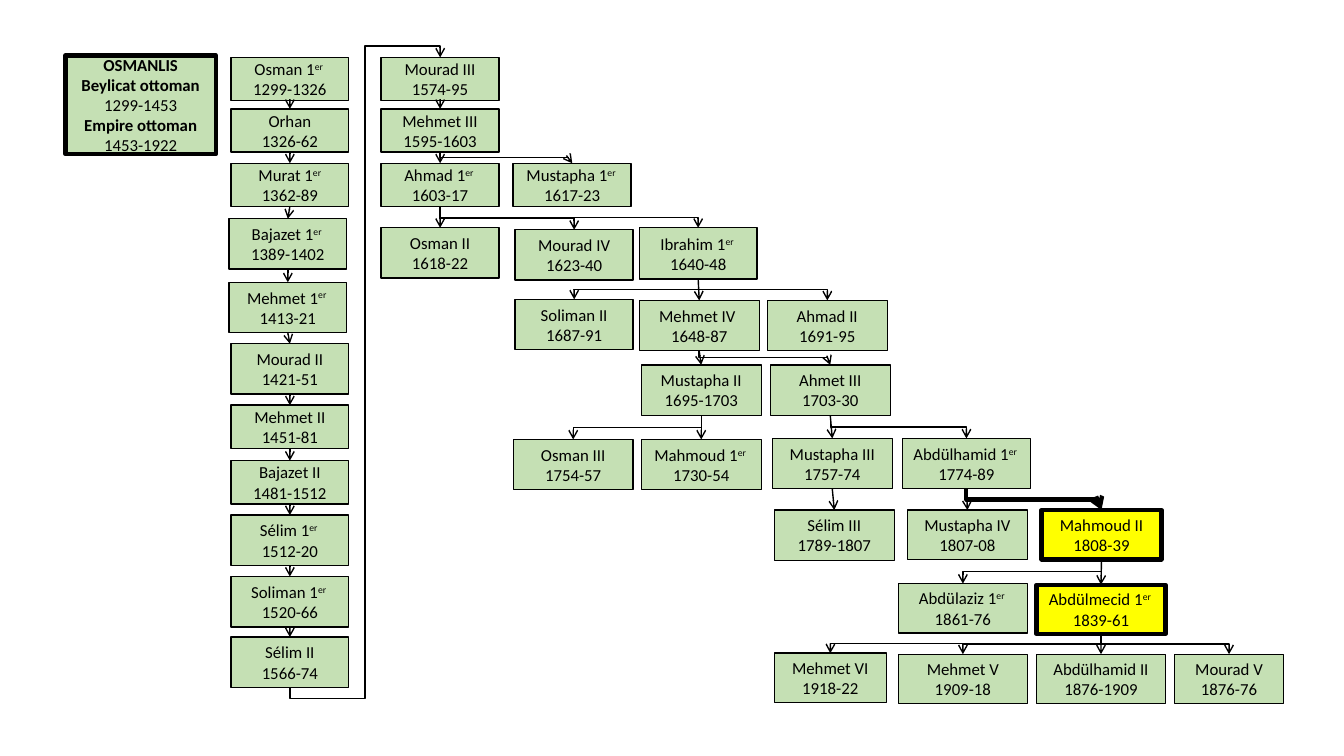
from dataclasses import dataclass

from lxml import etree
from pptx import Presentation
from pptx.dml.color import RGBColor
from pptx.enum.shapes import MSO_CONNECTOR, MSO_SHAPE
from pptx.enum.text import MSO_ANCHOR, PP_ALIGN
from pptx.oxml.ns import qn
from pptx.util import Inches, Pt

RECT = MSO_SHAPE.RECTANGLE
STRAIGHT = MSO_CONNECTOR.STRAIGHT
ELBOW = MSO_CONNECTOR.ELBOW
MIDDLE = MSO_ANCHOR.MIDDLE
CENTER = PP_ALIGN.CENTER
TOP, BOTTOM = 0, 2
RIGHT_ANGLE = 5400000


@dataclass(frozen=True)
class Theme:
    font: str = "Calibri"
    size: int = 12
    ink: RGBColor = RGBColor(0, 0, 0)
    green: RGBColor = RGBColor(0xC5, 0xE0, 0xB4)
    yellow: RGBColor = RGBColor(0xFF, 0xFF, 0)
    thin: int = 1
    thick: int = 3


class Tree:
    def __init__(self, slide, theme):
        self.s, self.theme = slide, theme

    def run(self, p, text, bold=False, raised=False):
        r = p.add_run()
        r.text = text
        r.font.name, r.font.size = self.theme.font, Pt(self.theme.size)
        r.font.bold = bold
        r.font.color.rgb = self.theme.ink
        if raised:
            r._r.get_or_add_rPr().set("baseline", "30000")

    def box(self, left, top, width, height, lines, bold=(), strong=False, fill=None):
        sp = self.s.shapes.add_shape(RECT, *map(Inches, (left, top, width, height)))
        sp.shadow.inherit = False
        sp.fill.solid()
        sp.fill.fore_color.rgb = fill or self.theme.green
        sp.line.color.rgb = self.theme.ink
        sp.line.width = Pt(self.theme.thick if strong else self.theme.thin)
        tf = sp.text_frame
        tf.word_wrap = True
        tf.vertical_anchor = MIDDLE
        for i, line in enumerate(lines):
            p = tf.paragraphs[0] if i == 0 else tf.add_paragraph()
            p.alignment = CENTER
            base, _, ordinal = line.partition("^")
            self.run(p, base, line in bold)
            if ordinal:
                self.run(p, ordinal, raised=True)
        return sp

    def link(self, parent, child, strong=False):
        x1, y1 = parent.left + parent.width // 2, parent.top + parent.height
        x2, y2 = child.left + child.width // 2, child.top
        straight = abs(x2 - x1) < Inches(0.05)
        c = self.s.shapes.add_connector(STRAIGHT if straight else ELBOW, x1, y1, x2, y2)
        c.begin_connect(parent, BOTTOM)
        c.end_connect(child, TOP)
        c.line.color.rgb = self.theme.ink
        c.line.width = Pt(self.theme.thick if strong else self.theme.thin)
        spPr = c._element.spPr
        etree.SubElement(spPr.find(qn("a:ln")), qn("a:tailEnd"), type="arrow")
        etree.SubElement(spPr, qn("a:effectLst"))
        if not straight:
            self.bend(c, x1, y1, x2, y2)

    def bend(self, c, x1, y1, x2, y2):
        width, height = abs(y2 - y1), abs(x2 - x1)
        c.left, c.top = (x1 + x2 - width) // 2, (y1 + y2 - height) // 2
        c.width, c.height = width, height
        upward, rightward = y2 < y1, x2 > x1
        xfrm = c._element.spPr.find(qn("a:xfrm"))
        turns = 3 if rightward and not upward else 1
        xfrm.set("rot", str(turns * RIGHT_ANGLE))
        xfrm.set("flipH", str(int(rightward)))
        xfrm.set("flipV", str(int(upward)))
        if upward:
            geom = c._element.spPr.find(qn("a:prstGeom"))
            geom.set("prst", "bentConnector5")
            guides = geom.find(qn("a:avLst"))
            for i, value in enumerate((-1800, 50000, 101800), 1):
                etree.SubElement(guides, qn("a:gd"), name=f"adj{i}", fmla=f"val {value}")


SULTANS = [
    (2.29, 0.57, 1.17, 0.43, "Osman 1^er ", "1299-1326"),
    (2.29, 1.08, 1.17, 0.43, "Orhan", "1326-62"),
    (2.29, 1.62, 1.17, 0.43, "Murat 1^er", "1362-89"),
    (2.27, 2.17, 1.17, 0.5, "Bajazet 1^er ", "1389-1402"),
    (2.27, 2.8, 1.17, 0.5, "Mehmet 1^er ", "1413-21"),
    (2.29, 3.41, 1.17, 0.5, "Mourad II", "1421-51"),
    (2.29, 4.02, 1.17, 0.43, "Mehmet II", "1451-81"),
    (2.29, 4.57, 1.17, 0.43, "Bajazet II", "1481-1512"),
    (2.29, 5.11, 1.17, 0.5, "Sélim 1^er ", "1512-20"),
    (2.29, 5.72, 1.17, 0.5, "Soliman 1^er ", "1520-66"),
    (2.29, 6.32, 1.17, 0.5, "Sélim II", "1566-74"),
    (3.78, 0.57, 1.17, 0.43, "Mourad III", "1574-95"),
    (3.78, 1.08, 1.17, 0.43, "Mehmet III", "1595-1603"),
    (3.78, 1.62, 1.17, 0.43, "Ahmad 1^er ", "1603-17"),
    (5.09, 1.62, 1.17, 0.43, "Mustapha 1^er ", "1617-23"),
    (3.78, 2.26, 1.17, 0.5, "Osman II", "1618-22"),
    (5.11, 2.28, 1.17, 0.5, "Mourad IV", "1623-40"),
    (6.34, 2.26, 1.17, 0.51, "Ibrahim 1^er ", "1640-48"),
    (5.11, 2.97, 1.17, 0.5, "Soliman II", "1687-91"),
    (6.34, 2.98, 1.19, 0.5, "Mehmet IV ", "1648-87"),
    (7.61, 2.98, 1.19, 0.5, "Ahmad II", "1691-95"),
    (6.36, 3.62, 1.19, 0.5, "Mustapha II", "1695-1703"),
    (7.64, 3.62, 1.19, 0.5, "Ahmet III", "1703-30"),
    (5.09, 4.36, 1.19, 0.5, "Osman III", "1754-57"),
    (6.36, 4.36, 1.19, 0.5, "Mahmoud 1^er ", "1730-54"),
    (7.66, 4.35, 1.19, 0.5, "Mustapha III", "1757-74"),
    (8.95, 4.35, 1.27, 0.5, "Abdülhamid 1^er ", "1774-89"),
    (7.68, 5.06, 1.19, 0.5, "Sélim III", "1789-1807"),
    (9, 5.06, 1.19, 0.49, "Mustapha IV", "1807-08"),
    (10.33, 5.06, 1.19, 0.49, "Mahmoud II", "1808-39"),
    (8.91, 5.79, 1.28, 0.49, "Abdülaziz 1^er ", "1861-76"),
    (10.28, 5.8, 1.28, 0.49, "Abdülmecid 1^er ", "1839-61"),
    (7.68, 6.48, 1.11, 0.49, "Mehmet VI", "1918-22"),
    (8.91, 6.49, 1.28, 0.49, "Mehmet V", "1909-18"),
    (10.28, 6.49, 1.28, 0.49, "Abdülhamid II", "1876-1909"),
    (11.65, 6.49, 1.08, 0.49, "Mourad V", "1876-76"),
]
DIRECT_LINE = 14
BRANCHES = {
    "Mehmet III": ["Mustapha 1"],
    "Ahmad 1": ["Osman II", "Mourad IV", "Ibrahim 1"],
    "Ibrahim 1": ["Soliman II", "Mehmet IV", "Ahmad II"],
    "Mehmet IV": ["Mustapha II", "Ahmet III"],
    "Mustapha II": ["Osman III", "Mahmoud 1"],
    "Ahmet III": ["Mustapha III", "Abdülhamid 1"],
    "Mustapha III": ["Sélim III"],
    "Abdülhamid 1": ["Mustapha IV", "Mahmoud II"],
    "Mahmoud II": ["Abdülaziz 1", "Abdülmecid 1"],
    "Abdülmecid 1": ["Mehmet VI", "Mehmet V", "Abdülhamid II", "Mourad V"],
}
HIGHLIGHTED = {"Mahmoud II", "Abdülmecid 1"}
STRONG_LINK = ("Abdülhamid 1", "Mahmoud II")
HEADINGS = ("OSMANLIS", "Beylicat ottoman", "Empire ottoman")


def main():
    prs = Presentation()
    prs.slide_width, prs.slide_height = Inches(13.33), Inches(7.5)
    theme = Theme()
    tree = Tree(prs.slides.add_slide(prs.slide_layouts[6]), theme)

    title, beylik, empire = HEADINGS
    tree.box(0.65, 0.55, 1.49, 0.98,
             (title, beylik, "1299-1453", empire, "1453-1922"), HEADINGS, strong=True)

    boxes = {}
    for *place, name, reign in SULTANS:
        key = name.partition("^")[0].strip()
        marked = key in HIGHLIGHTED
        boxes[key] = tree.box(*place, (name, reign), strong=marked,
                              fill=theme.yellow if marked else theme.green)

    line = list(boxes)[:DIRECT_LINE]
    links = list(zip(line, line[1:]))
    links += [(parent, child) for parent, heirs in BRANCHES.items() for child in heirs]
    for parent, child in links:
        tree.link(boxes[parent], boxes[child], (parent, child) == STRONG_LINK)

    prs.save("out.pptx")


if __name__ == "__main__":
    main()
